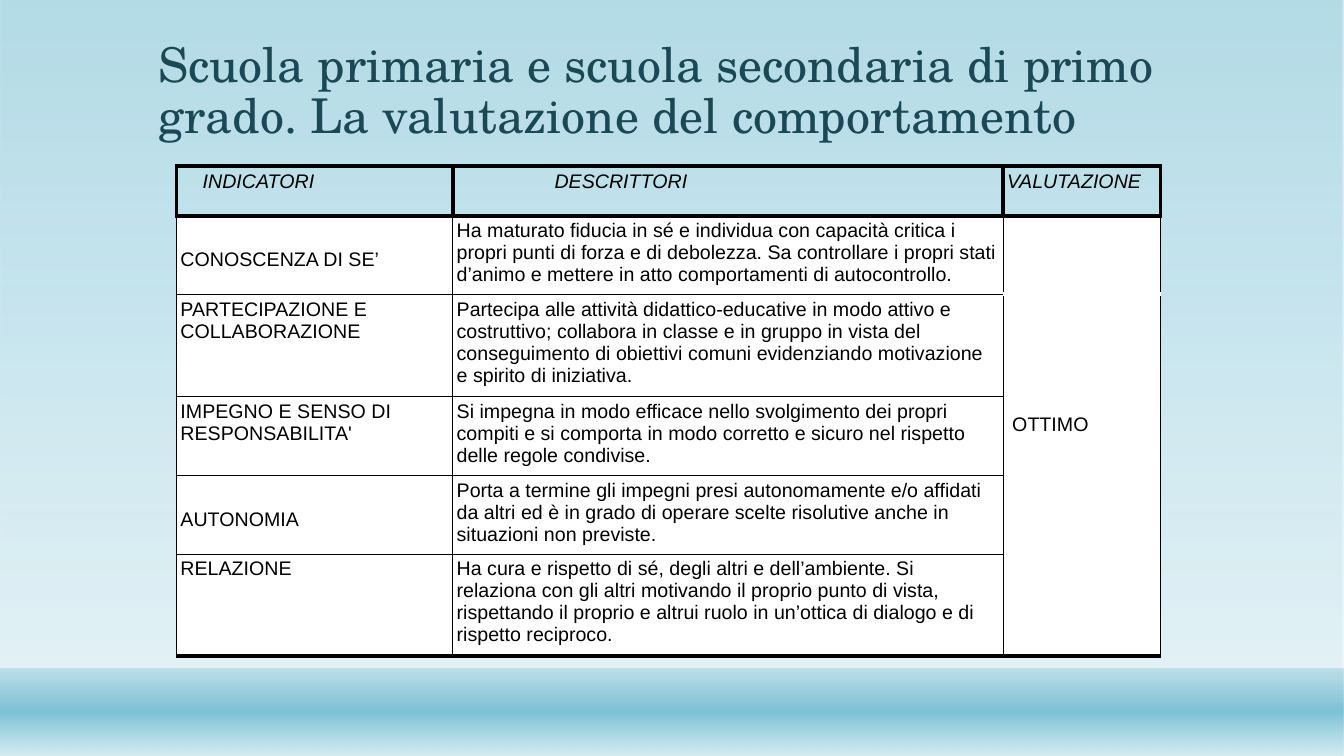
from lxml import etree
from pptx import Presentation, util as u
from pptx.dml.color import RGBColor
from pptx.enum import shapes, text
from pptx.oxml.ns import qn

# Content
TITLE = "Scuola primaria e scuola secondaria di primo grado. La valutazione del comportamento"
HEADINGS = ["INDICATORI", "DESCRITTORI", "VALUTAZIONE"]
CRITERIA = [
    ("CONOSCENZA DI SE’",
     "Ha maturato fiducia in sé e individua con capacità critica i propri punti di forza e di "
     "debolezza. Sa controllare i propri stati d’animo e mettere in atto comportamenti di "
     "autocontrollo."),
    ("PARTECIPAZIONE E COLLABORAZIONE",
     "Partecipa alle attività didattico-educative in modo attivo e costruttivo; collabora in "
     "classe e in gruppo in vista del conseguimento di obiettivi comuni evidenziando "
     "motivazione e spirito di iniziativa."),
    ("IMPEGNO E SENSO DI RESPONSABILITA'",
     "Si impegna in modo efficace nello svolgimento dei propri compiti e si comporta in modo "
     "corretto e sicuro nel rispetto delle regole condivise."),
    ("AUTONOMIA",
     "Porta a termine gli impegni presi autonomamente e/o affidati da altri ed è in grado di "
     "operare scelte risolutive anche in situazioni non previste."),
    ("RELAZIONE",
     "Ha cura e rispetto di sé, degli altri e dell’ambiente. Si relaziona con gli altri "
     "motivando il proprio punto di vista, rispettando il proprio e altrui ruolo in un’ottica "
     "di dialogo e di rispetto reciproco."),
]
GRADE = "OTTIMO"

# Look and measures (inches, points)
COLORS = {"sky": "7DC2D6", "mist": "D4EBF1", "title": "1B4855", "ink": "000000", "paper": "FFFFFF"}
WIDTH, HEIGHT = 13.33, 7.5
BAND_TOP = 6.63
COLUMNS = [2.74, 5.46, 1.56]
ROWS = [0.49, 0.74, 0.96, 0.74, 0.74, 0.96]
INSET, LOWERED = 0.04, 0.33
HEADING_INDENTS = [0.26, 1.01, INSET]
THIN, THICK = 0.5, 3
LAST = len(CRITERIA)


def write(frame, words, font="Arial", size=14, color="ink", italic=False, spacing=1.0):
    para = frame.paragraphs[0]
    para.line_spacing = spacing
    para.alignment = text.PP_ALIGN.LEFT
    para.font.size = u.Pt(size)
    span = para.add_run()
    span.text = words
    span.font.name, span.font.size, span.font.italic = font, u.Pt(size), italic
    span.font.color.rgb = RGBColor.from_string(COLORS[color])


def add_gradient(page, top, height, stops):
    """Full-width rectangle; stops are (position %, colour, opacity %) from the top down."""
    box = page.shapes.add_shape(shapes.MSO_SHAPE.RECTANGLE, 0, u.Inches(top),
                                u.Inches(WIDTH), u.Inches(height))
    box.shadow.inherit = False
    box.line.fill.background()
    box.fill.gradient()
    grad = box.fill._xPr.find(qn("a:gradFill"))
    for child in list(grad):
        grad.remove(child)
    stop_list = etree.SubElement(grad, qn("a:gsLst"))
    for position, color, opacity in stops:
        stop = etree.SubElement(stop_list, qn("a:gs"), pos=str(position * 1000))
        tone = etree.SubElement(stop, qn("a:srgbClr"), val=COLORS[color])
        etree.SubElement(tone, qn("a:alpha"), val=str(opacity * 1000))
    etree.SubElement(grad, qn("a:lin"), ang="5400000", scaled="0")


def set_borders(cell, **sides):
    """Each side is (colour, points); sides not given are thin ink lines."""
    props = cell._tc.get_or_add_tcPr()
    for side in "LRTB":
        color, points = sides.get(side, ("ink", THIN))
        line = etree.SubElement(props, qn(f"a:ln{side}"), w=str(u.Pt(points)))
        fill = etree.SubElement(line, qn("a:solidFill"))
        etree.SubElement(fill, qn("a:srgbClr"), val=COLORS[color])


def fill_cell(cell, words, left=INSET, top=INSET, italic=False, paper=True, **sides):
    cell.margin_left, cell.margin_top = u.Inches(left), u.Inches(top)
    cell.margin_right = cell.margin_bottom = u.Inches(INSET)
    cell.vertical_anchor = text.MSO_ANCHOR.TOP
    write(cell.text_frame, words, italic=italic)
    set_borders(cell, **sides)
    if paper:
        cell.fill.solid()
        cell.fill.fore_color.rgb = RGBColor.from_string(COLORS["paper"])
    else:
        cell.fill.background()


def main():
    deck = Presentation()
    deck.slide_width, deck.slide_height = u.Inches(WIDTH), u.Inches(HEIGHT)
    page = deck.slides.add_slide(deck.slide_layouts[6])

    # Background
    add_gradient(page, 0, HEIGHT, [(0, "sky", 58), (88, "mist", 65)])
    add_gradient(page, BAND_TOP, HEIGHT - BAND_TOP,
                 [(1, "sky", 38), (49, "sky", 100), (100, "mist", 89)])

    # Title
    box = page.shapes.add_textbox(u.Inches(1.47), u.Inches(0.29), u.Inches(10.4), u.Inches(1.19))
    box.text_frame.word_wrap = True
    box.text_frame.vertical_anchor = text.MSO_ANCHOR.BOTTOM
    write(box.text_frame, TITLE, font="TeX Gyre Schola", size=34.2, color="title", spacing=0.9)

    # Table grid
    table = page.shapes.add_table(len(ROWS), len(COLUMNS), u.Inches(1.75), u.Inches(1.65),
                                  u.Inches(sum(COLUMNS)), u.Inches(sum(ROWS))).table
    table.first_row = table.horz_banding = False
    for column, width in zip(table.columns, COLUMNS):
        column.width = u.Inches(width)
    for row, height in zip(table.rows, ROWS):
        row.height = u.Inches(height)

    # Headings
    heavy, erased = ("ink", THICK), ("paper", THICK)
    for c, (heading, indent) in enumerate(zip(HEADINGS, HEADING_INDENTS)):
        fill_cell(table.cell(0, c), heading, left=indent, italic=True, paper=False,
                  **dict.fromkeys("LRTB", heavy))

    # Criteria
    for r, (name, description) in enumerate(CRITERIA, start=1):
        sides = {1: {"T": heavy}, LAST: {"B": heavy}}.get(r, {})
        lowered = name in ("CONOSCENZA DI SE’", "AUTONOMIA")
        fill_cell(table.cell(r, 0), name, top=LOWERED if lowered else INSET, **sides)
        fill_cell(table.cell(r, 1), description, **sides)

    # Grade
    fill_cell(table.cell(1, 2), "", T=heavy, B=erased)
    table.cell(2, 2).merge(table.cell(LAST, 2))
    fill_cell(table.cell(2, 2), GRADE, left=0.09, top=1.18, T=erased, B=heavy)

    deck.save("out.pptx")


if __name__ == "__main__":
    main()
